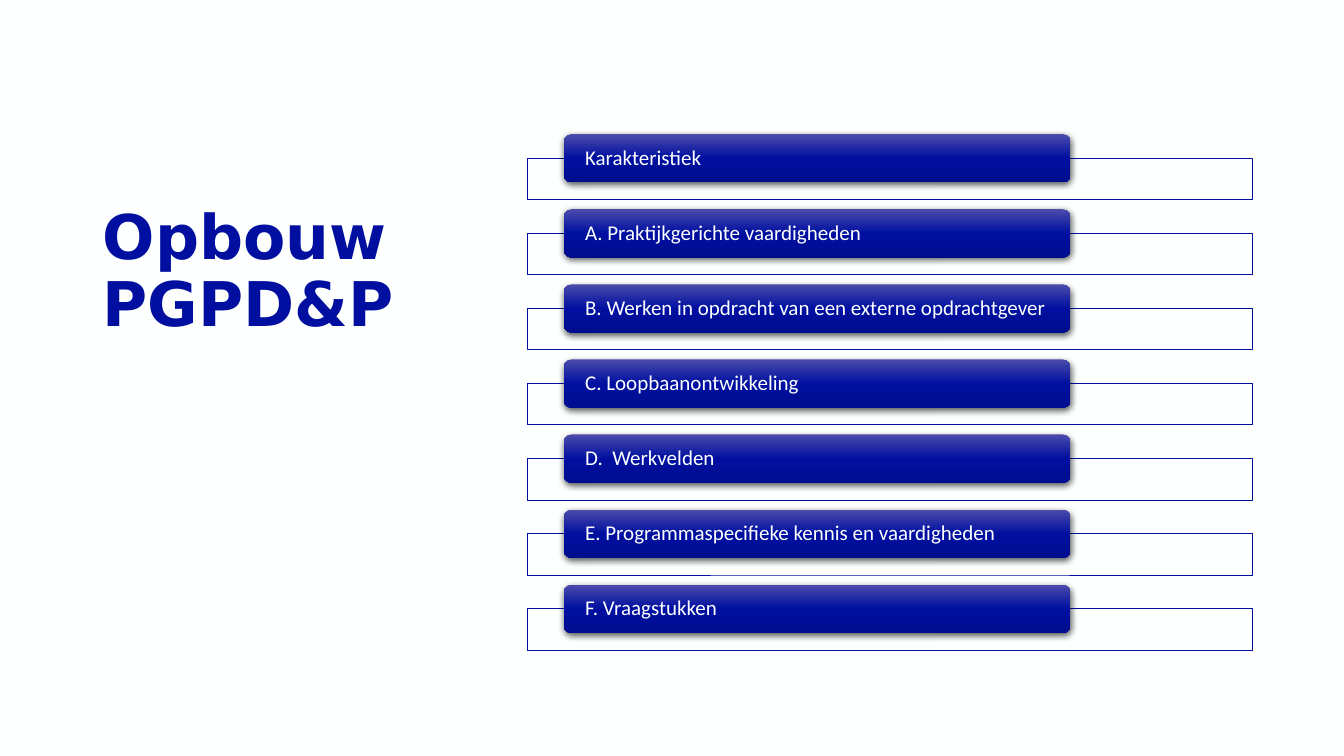
"""Builds the slide with the structure of the PGPD&P as seven labelled bars."""
from copy import deepcopy

from lxml import etree
from pptx import Presentation
from pptx.dml.color import RGBColor
from pptx.enum.shapes import MSO_SHAPE
from pptx.enum.text import MSO_ANCHOR, MSO_AUTO_SIZE, PP_ALIGN
from pptx.oxml.ns import qn
from pptx.util import Inches, Pt

RECT, ROUNDED = MSO_SHAPE.RECTANGLE, MSO_SHAPE.ROUNDED_RECTANGLE
TOP, MIDDLE, LEFT = MSO_ANCHOR.TOP, MSO_ANCHOR.MIDDLE, PP_ALIGN.LEFT
NO_FIT = MSO_AUTO_SIZE.NONE

COLORS = {
    "paper": "FEFFFF",
    "blue": "000FA0",
    "light": "4B4CAB",
    "dark": "000D8E",
    "shadow": "000000",
}
GRADIENT = [(0, "light"), (0.5, "blue"), (1, "dark")]
PARTS = [
    "Karakteristiek",
    "A. Praktijkgerichte vaardigheden",
    "B. Werken in opdracht van een externe opdrachtgever",
    "C. Loopbaanontwikkeling",
    "D.  Werkvelden",
    "E. Programmaspecifieke kennis en vaardigheden",
    "F. Vraagstukken",
]
FIRST_TOP, LAST_TOP = 1.33, 5.8
ROW = (LAST_TOP - FIRST_TOP) / (len(PARTS) - 1)


def rgb(name):
    """Return the named colour."""
    return RGBColor.from_string(COLORS[name])


def style_text(tf, size, font, color, bold=False):
    """Format the only paragraph of a text frame."""
    p = tf.paragraphs[0]
    p.alignment = LEFT
    p.line_spacing = 0.9
    for r in p.runs:
        r.font.size, r.font.name, r.font.bold = Pt(size), font, bold
        r.font.color.rgb = rgb(color)


def add_title(s, text):
    """Fill and place the title placeholder."""
    sp = s.shapes.title
    sp.left, sp.top = Inches(0.92), Inches(2)
    sp.width, sp.height = Inches(4.31), Inches(2.02)
    tf = sp.text_frame
    tf.text = text
    tf.word_wrap, tf.auto_size, tf.vertical_anchor = True, NO_FIT, TOP
    style_text(tf, 44, "DejaVu Sans", "blue", bold=True)


def add_box(shapes, kind, left, top, width, height):
    """Add a preset shape measured in inches."""
    sp = shapes.add_shape(kind, *map(Inches, (left, top, width, height)))
    sp.shadow.inherit = False
    return sp


def add_frame(shapes, top):
    """Add the thin outlined box behind a label."""
    sp = add_box(shapes, RECT, 5.23, top, 7.19, 0.41)
    sp.fill.solid()
    sp.fill.fore_color.rgb = rgb("paper")
    color = sp._element.spPr.find(qn("a:solidFill"))[0]
    etree.SubElement(color, qn("a:alpha"), val="90000")
    sp.line.color.rgb = rgb("blue")
    sp.line.width = Pt(0.5)


def shade(sp):
    """Give a shape the vertical blue gradient."""
    sp.fill.gradient()
    sp.fill.gradient_angle = 270
    stops = sp._element.spPr.find(qn("a:gradFill")).find(qn("a:gsLst"))
    stops.append(deepcopy(stops[0]))
    for stop, (position, color) in zip(sp.fill.gradient_stops, GRADIENT):
        stop.position = position
        stop.color.rgb = rgb(color)


def cast_shadow(sp):
    """Give a shape a soft shadow straight below it."""
    effects = sp._element.spPr.find(qn("a:effectLst"))
    shadow = etree.SubElement(
        effects, qn("a:outerShdw"), blurRad=str(Pt(4.5)), dist=str(Pt(1.5)),
        dir="5400000", algn="ctr", rotWithShape="0")
    color = etree.SubElement(shadow, qn("a:srgbClr"), val=COLORS["shadow"])
    etree.SubElement(color, qn("a:alpha"), val="63000")


def add_label(shapes, top, text):
    """Add the rounded gradient bar with its text."""
    sp = add_box(shapes, ROUNDED, 5.59, top, 5.03, 0.48)
    shade(sp)
    cast_shadow(sp)
    sp.line.fill.background()
    tf = sp.text_frame
    tf.text = text
    tf.word_wrap, tf.vertical_anchor = True, MIDDLE
    tf.margin_left = tf.margin_right = Inches(0.19)
    tf.margin_top = tf.margin_bottom = 0
    style_text(tf, 15, "Calibri", "paper")


def main():
    """Build and save the slide."""
    prs = Presentation()
    prs.slide_width, prs.slide_height = Inches(13.33), Inches(7.5)
    s = prs.slides.add_slide(prs.slide_layouts[5])
    s.background.fill.solid()
    s.background.fill.fore_color.rgb = rgb("paper")
    add_title(s, "Opbouw PGPD&P")
    group = s.shapes.add_group_shape()
    for i, part in enumerate(PARTS):
        top = FIRST_TOP + i * ROW
        add_frame(group.shapes, top + 0.24)
        add_label(group.shapes, top, part)
    prs.save("out.pptx")


if __name__ == "__main__":
    main()
